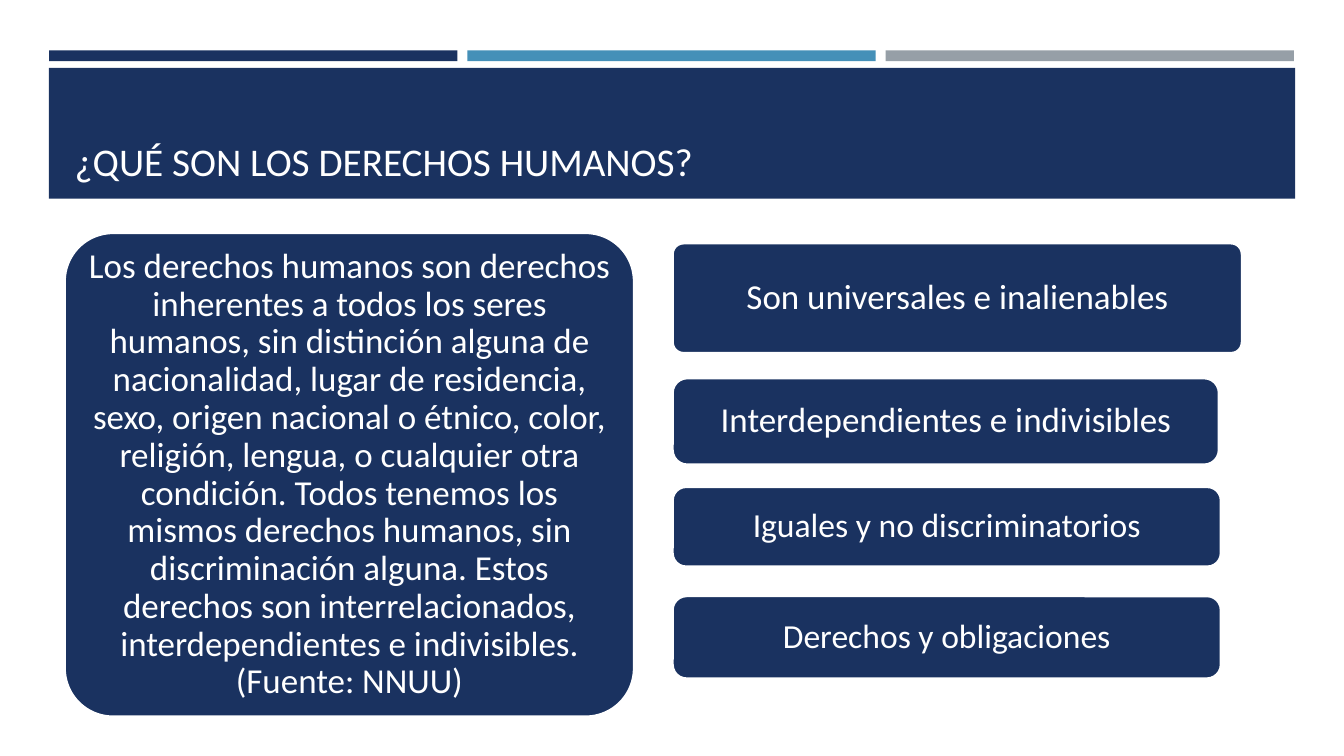
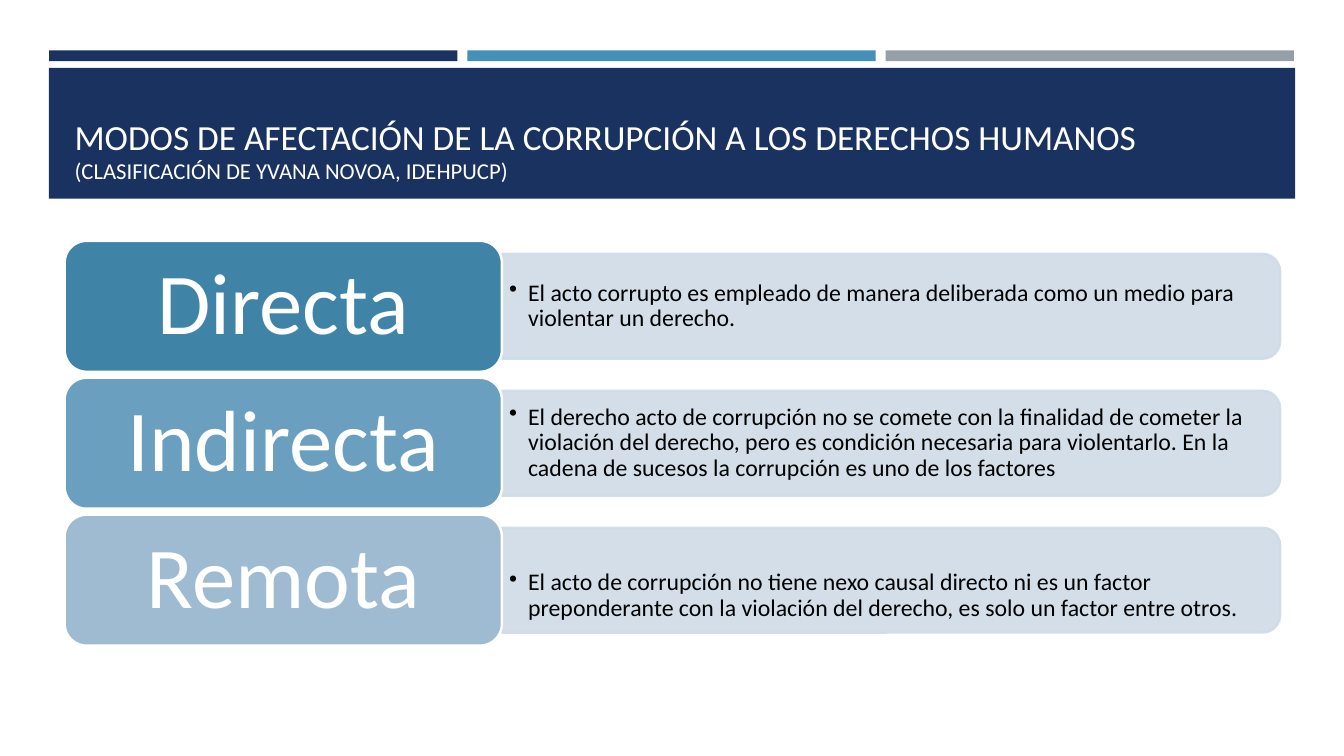
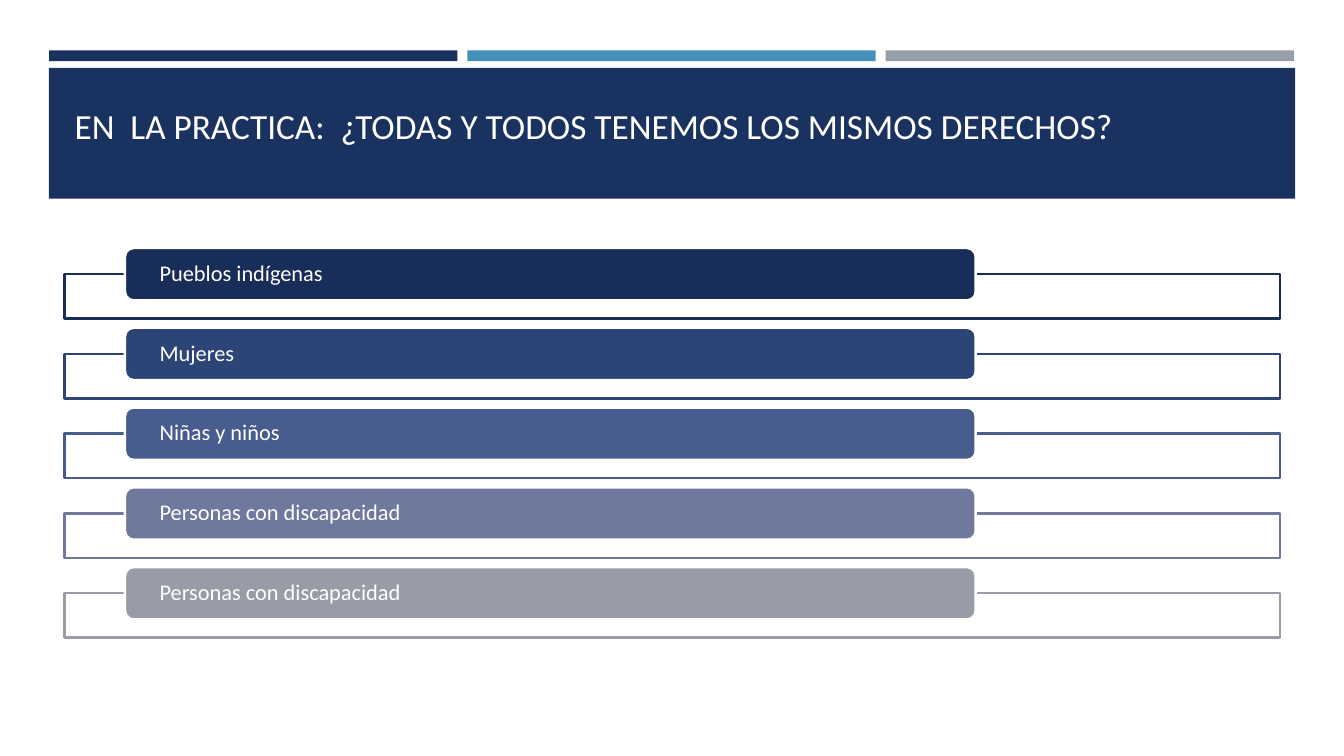
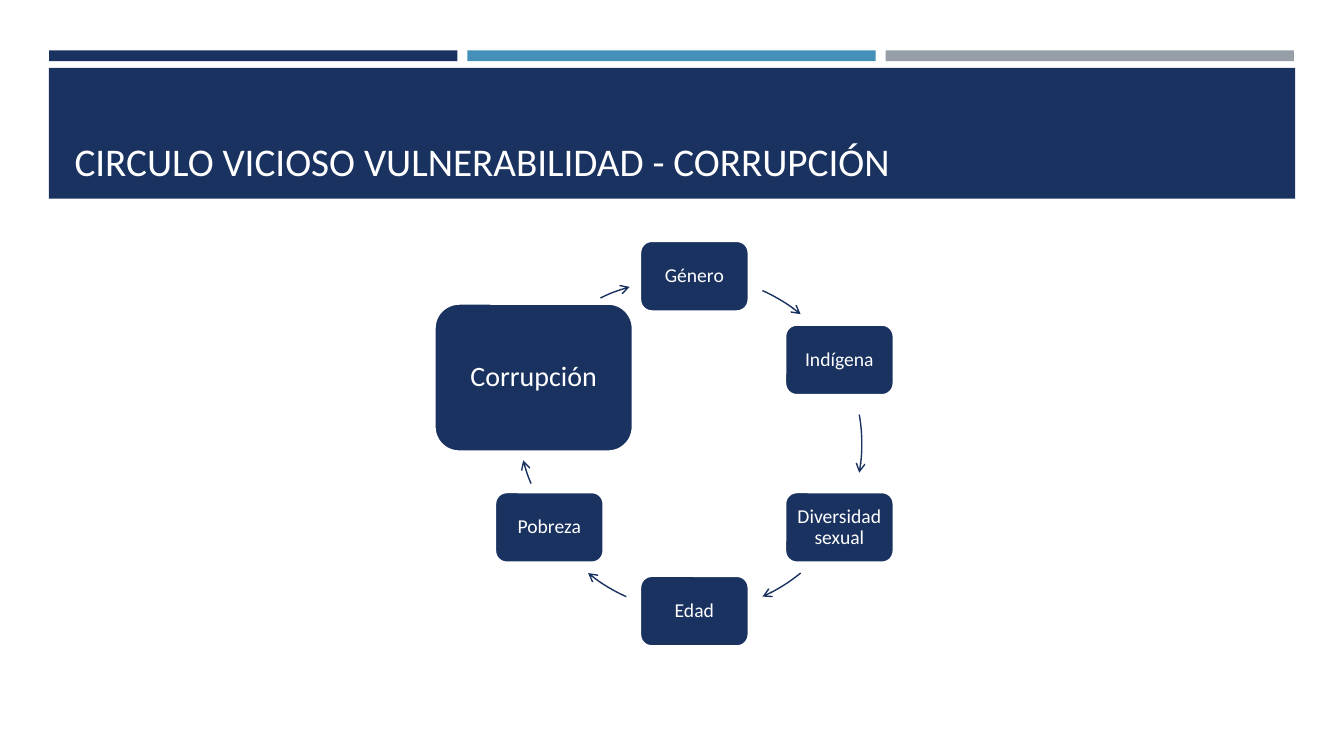
import math
from dataclasses import dataclass

from lxml import etree
from pptx import Presentation
from pptx.dml.color import RGBColor
from pptx.enum import shapes, text
from pptx.oxml import ns
from pptx.util import Cm, Pt

PRESET = shapes.MSO_SHAPE
ALIGN = text.PP_ALIGN
ANCHOR = text.MSO_ANCHOR


@dataclass(frozen=True)
class Theme:
    # Colours
    navy: str = "1A3260"
    blue: str = "4590B8"
    grey: str = "969FA7"
    white: str = "FFFFFF"
    black: str = "000000"
    pale: str = "CFDBE6"
    modes: tuple = ("3F83A7", "6B9FC0", "9FBBD1")
    groups: tuple = ("182D57", "2D4476", "495C8E", "6E799D", "999CA6")
    # Type and lines
    font: str = "Calibri"
    title: float = 28
    long_title: float = 25.2
    subtitle: float = 16.2
    statement: float = 25
    short_statement: float = 24
    mode: float = 62
    bullet: float = 17
    group: float = 16
    node: float = 14
    main_node: float = 20
    outline: float = 1.75
    arrow: float = 1
    tight: float = 0.9


THEME = Theme()


# Basic elements
def add_box(slide, preset, left, top, width, height, fill=None, line=None, weight=THEME.outline):
    shape = slide.shapes.add_shape(preset, Cm(left), Cm(top), Cm(width), Cm(height))
    shape.shadow.inherit = False
    if fill:
        shape.fill.solid()
        shape.fill.fore_color.rgb = RGBColor.from_string(fill)
    else:
        shape.fill.background()
    if line:
        shape.line.color.rgb = RGBColor.from_string(line)
        shape.line.width = Pt(weight)
    else:
        shape.line.fill.background()
    return shape


def set_frame(shape, anchor, left, top, right, bottom):
    frame = shape.text_frame
    frame.word_wrap = True
    frame.vertical_anchor = anchor
    frame.margin_left, frame.margin_top = Cm(left), Cm(top)
    frame.margin_right, frame.margin_bottom = Cm(right), Cm(bottom)
    return frame


def write(paragraph, words, size, color=THEME.white, align=ALIGN.LEFT, spacing=1.0):
    paragraph.text = words
    paragraph.alignment = align
    paragraph.line_spacing = spacing
    paragraph.font.name = THEME.font
    paragraph.font.size = Pt(size)
    paragraph.font.color.rgb = RGBColor.from_string(color)


def set_opacity(shape, percent):
    for color in shape._element.spPr.iter(ns.qn("a:srgbClr")):
        etree.SubElement(color, ns.qn("a:alpha"), val=str(percent * 1000))


def add_bullet(paragraph, indent):
    properties = paragraph._p.get_or_add_pPr()
    properties.set("marL", str(Cm(indent)))
    properties.set("indent", str(-Cm(indent)))
    etree.SubElement(properties, ns.qn("a:buChar"), char="•")


def add_label(slide, left, top, width, height, words, size, fill=THEME.navy,
              inset=(0.13, 0.08), align=ALIGN.CENTER):
    """Rounded box with a white edge and its own text."""
    shape = add_box(slide, PRESET.ROUNDED_RECTANGLE, left, top, width, height, fill, THEME.white)
    frame = set_frame(shape, ANCHOR.MIDDLE, *inset, *inset)
    write(frame.paragraphs[0], words, size, align=align, spacing=THEME.tight)
    return shape


def add_arc_arrow(slide, center_x, center_y, radius, start, end):
    """Clockwise arc with an arrowhead; angles in degrees from three o'clock."""
    arc = add_box(slide, PRESET.ARC, center_x - radius, center_y - radius,
                  2 * radius, 2 * radius, line=THEME.navy, weight=THEME.arrow)
    for index, angle in enumerate((start, end)):
        arc.adjustments[index] = angle % 360 * 0.6  # 60000 units a degree, scaled by 100000
    etree.SubElement(arc.line._get_or_add_ln(), ns.qn("a:tailEnd"), type="arrow")


# Slide base: three stripes, banner and title
def add_titled_slide(presentation, *lines, bottom=0.13):
    slide = presentation.slides.add_slide(presentation.slide_layouts[6])
    for index, color in enumerate((THEME.navy, THEME.blue, THEME.grey)):
        add_box(slide, PRESET.RECTANGLE, 1.24 + index * 10.54, 1.27, 10.29, 0.27, color)
    add_box(slide, PRESET.RECTANGLE, 1.23, 1.71, 31.41, 3.3, THEME.navy)
    title = slide.shapes.add_textbox(Cm(1.63), Cm(1.96), Cm(30.63), Cm(2.82))
    frame = set_frame(title, ANCHOR.BOTTOM, 0.25, 0.13, 0.25, bottom)
    for index, (words, size) in enumerate(lines):
        paragraph = frame.add_paragraph() if index else frame.paragraphs[0]
        write(paragraph, words, size)
    return slide


# Slide contents
def build_definition(presentation):
    slide = add_titled_slide(presentation, ("¿QUÉ SON LOS DERECHOS HUMANOS?", THEME.title))
    definition = add_label(
        slide, 1.63, 5.87, 14.35, 12.19,
        "Los derechos humanos son derechos inherentes a todos los seres humanos, sin distinción "
        "alguna de nacionalidad, lugar de residencia, sexo, origen nacional o étnico, color, "
        "religión, lengua, o cualquier otra condición. Todos tenemos los mismos derechos humanos, "
        "sin discriminación alguna. Estos derechos son interrelacionados, interdependientes e "
        "indivisibles. (Fuente: NNUU)", THEME.statement)
    definition.adjustments[0] = 0.1
    features = (
        (6.13, 14.35, 2.77, "Son universales e inalienables", THEME.statement, 0.1),
        (9.53, 13.77, 2.18, "Interdependientes e indivisibles", THEME.statement, 0.17),
        (12.27, 13.82, 2.01, "Iguales y no discriminatorios", THEME.short_statement, 0.17),
        (15.02, 13.82, 2.08, "Derechos y obligaciones", THEME.short_statement, 0.17),
    )
    for top, width, height, words, size, rounding in features:
        feature = add_label(slide, 16.95, top, width, height, words, size)
        feature.adjustments[0] = rounding


def build_modes(presentation):
    slide = add_titled_slide(
        presentation,
        ("MODOS DE AFECTACIÓN DE LA CORRUPCIÓN A LOS DERECHOS HUMANOS", THEME.long_title),
        ("(CLASIFICACIÓN DE YVANA NOVOA, IDEHPUCP)", THEME.subtitle))
    # Name, explanation, extra space above the explanation
    modes = (
        ("Directa", "El acto corrupto es empleado de manera deliberada como un medio para "
         "violentar un derecho.", 0),
        ("Indirecta", "El derecho acto de corrupción no se comete con la finalidad de cometer la "
         "violación del derecho, pero es condición necesaria para violentarlo. En la cadena de "
         "sucesos la corrupción es uno de los factores", 0),
        ("Remota", "El acto de corrupción no tiene nexo causal directo ni es un factor "
         "preponderante con la violación del derecho, es solo un factor entre otros.", 0.8),
    )
    label_width, label_height = 11.02, 3.3
    panel_left, panel_length, panel_height = 12.65, 19.61, 2.64
    for index, (name, explanation, drop) in enumerate(modes):
        top = 6.07 + index * 3.45
        middle = top + label_height / 2
        # The panel stands upright and is turned, so its round corners face right
        panel = add_box(slide, PRESET.ROUND_2_SAME_RECTANGLE,
                        panel_left + (panel_length - panel_height) / 2, middle - panel_length / 2,
                        panel_height, panel_length, THEME.pale, THEME.pale)
        panel.rotation = 90
        set_opacity(panel, 90)
        box = slide.shapes.add_textbox(Cm(panel_left), Cm(middle - 1.19), Cm(19.48), Cm(2.38))
        frame = set_frame(box, ANCHOR.MIDDLE, 0.18, 0.1 + drop, 0.18, 0.1)
        paragraph = frame.paragraphs[0]
        paragraph.line_spacing = THEME.tight
        add_bullet(paragraph, 0.48)
        write(paragraph, explanation, THEME.bullet, THEME.black, spacing=THEME.tight)
        add_label(slide, 1.63, top, label_width, label_height, name, THEME.mode,
                  THEME.modes[index], (0.66, 0.33))


def build_groups(presentation):
    slide = add_titled_slide(
        presentation,
        ("EN  LA PRACTICA:  ¿TODAS Y TODOS TENEMOS LOS MISMOS DERECHOS?", THEME.long_title),
        bottom=1.21)
    groups = ("Pueblos indígenas", "Mujeres", "Niñas y niños",
              "Personas con discapacidad", "Personas con discapacidad")
    for index, (name, color) in enumerate(zip(groups, THEME.groups)):
        top = 6.25 + index * 2.01
        add_box(slide, PRESET.RECTANGLE, 1.63, top + 0.66, 30.63, 1.12, THEME.white, color)
        add_label(slide, 3.15, top, 21.44, 1.32, name, THEME.group, color, (0.81, 0), ALIGN.LEFT)


def build_cycle(presentation):
    slide = add_titled_slide(
        presentation, ("CIRCULO VICIOSO VULNERABILIDAD - CORRUPCIÓN", THEME.title))
    center_x, center_y, radius = 17.5, 11.18, 4.22
    node_width, node_height = 2.74, 1.78
    # Small nodes stand every 60 degrees, from the top
    for index, name in enumerate(("Género", "Indígena", "Diversidad sexual", "Edad", "Pobreza")):
        angle = math.radians(-90 + 60 * index)
        add_label(slide, center_x + radius * math.cos(angle) - node_width / 2,
                  center_y + radius * math.sin(angle) - node_height / 2,
                  node_width, node_height, name, THEME.node, inset=(0.15, 0.15))
    add_label(slide, 10.95, 7.65, 5, 3.73, "Corrupción", THEME.main_node, inset=(0.2, 0.2))
    # Arrows between small nodes share the ring
    for start, end in ((-66, -50.6), (-10, 10), (50.6, 66), (114, 129.4)):
        add_arc_arrow(slide, center_x, center_y, radius, start, end)
    # Arrows into and out of the large node use shifted rings
    add_arc_arrow(slide, 17.27, 10.54, radius, 157, 165.4)
    add_arc_arrow(slide, 16.99, 11.3, radius, 243.9, 254.6)


def main():
    presentation = Presentation()
    presentation.slide_width, presentation.slide_height = Cm(33.87), Cm(19.05)
    for build in (build_definition, build_modes, build_groups, build_cycle):
        build(presentation)
    presentation.save("out.pptx")


if __name__ == "__main__":
    main()
